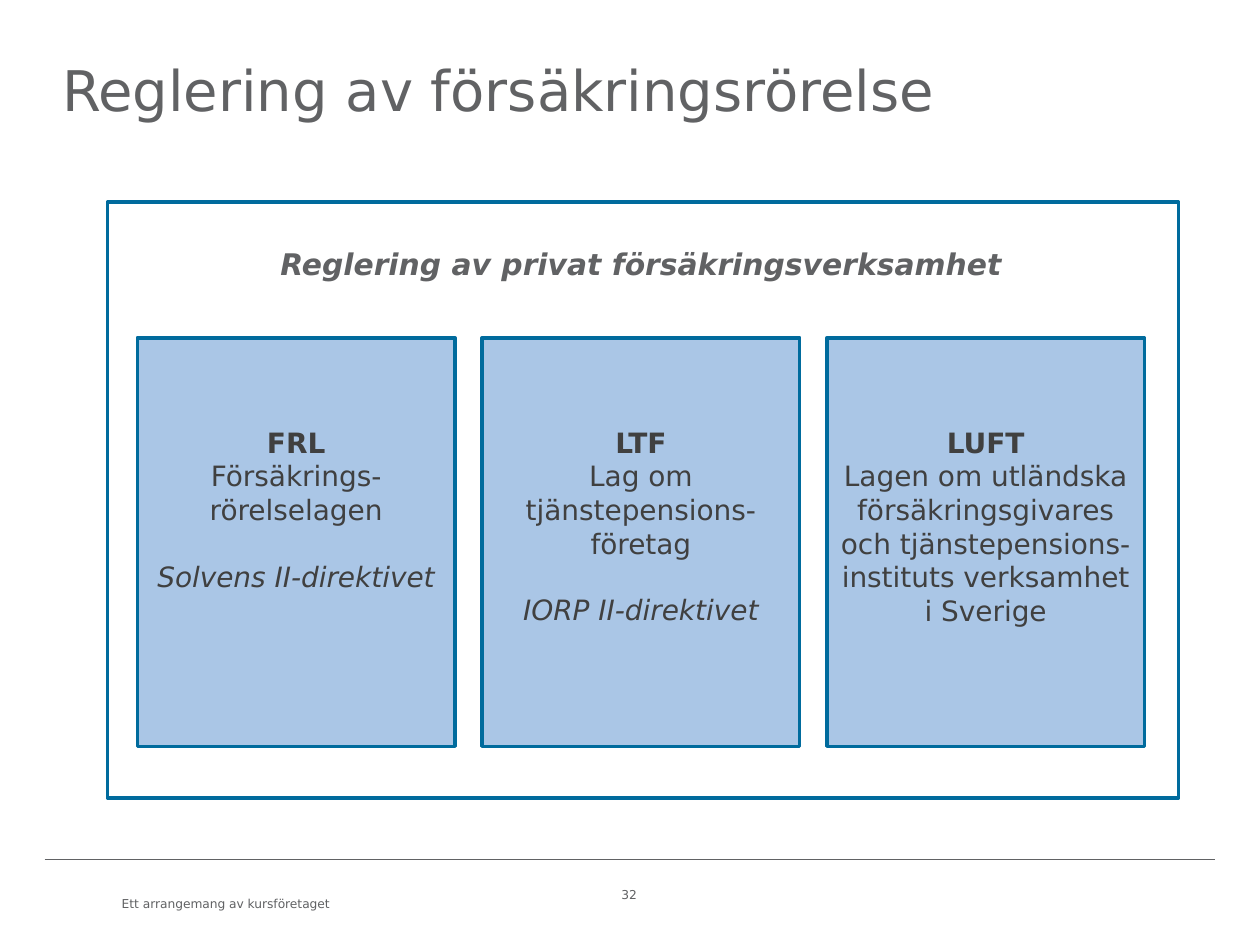
from pptx import Presentation
from pptx.dml.color import RGBColor
from pptx.enum.shapes import MSO_CONNECTOR as Line, MSO_SHAPE as Shape
from pptx.enum.text import MSO_ANCHOR as Anchor, PP_ALIGN as Align
from pptx.util import Pt
from lxml.etree import SubElement
from pptx.oxml.ns import qn

# Content
TITLE = "Reglering av försäkringsrörelse"
HEADING = "Reglering av privat försäkringsverksamhet"
LAWS = [
    ("FRL", "Försäkrings-rörelselagen", "Solvens II-direktivet"),
    ("LTF", "Lag om tjänstepensions-företag", "IORP II-direktivet"),
    ("LUFT", "Lagen om utländska försäkringsgivares och tjänstepensions-instituts "
             "verksamhet i Sverige", None),
]
FOOTER = "Ett arrangemang av kursföretaget"
NUMBER = "32"

FONT = "DejaVu Sans"
GREY = RGBColor(0x61, 0x62, 0x64)
DARK = RGBColor(0x40, 0x40, 0x40)
BLUE = RGBColor(0x00, 0x6B, 0x9D)
PALE = RGBColor(0xAA, 0xC6, 0xE6)

# Card grid
LEFT, TOP, WIDTH, HEIGHT, STEP = 78.5, 193, 181.5, 233.5, 197

deck = Presentation()
deck.slide_width, deck.slide_height = Pt(720), Pt(540)
slide = deck.slides.add_slide(deck.slide_layouts[6])
shapes = slide.shapes


def write(par, text, size=16, color=GREY, bold=False, italic=False,
          align=Align.LEFT, space=None, before=0):
    par.alignment = align
    par.space_before = Pt(before)
    if space:
        par.line_spacing = space
    run = par.add_run()
    run.text = text
    font = run.font
    font.name, font.size, font.bold, font.italic = FONT, Pt(size), bold, italic
    font.color.rgb = color


def label(text, x, y, w, h, **style):
    frame = shapes.add_textbox(Pt(x), Pt(y), Pt(w), Pt(h)).text_frame
    frame.word_wrap = True
    write(frame.paragraphs[0], text, **style)
    return frame


def block(x, y, w, h, fill=None):
    box = shapes.add_shape(Shape.RECTANGLE, Pt(x), Pt(y), Pt(w), Pt(h))
    box.shadow.inherit = False
    box.line.color.rgb, box.line.width = BLUE, Pt(2)
    if fill:
        box.fill.solid()
        box.fill.fore_color.rgb = fill
    else:
        box.fill.background()
    return box


# Footer
rule = shapes.add_connector(Line.STRAIGHT, Pt(25.5), Pt(491), Pt(694.5), Pt(491))
rule.line.color.rgb, rule.line.width = GREY, Pt(0.75)
SubElement(rule.element.spPr, qn("a:effectLst"))
label(FOOTER, 62.5, 510, 152.5, 14.5, size=7, space=0.85)
label(NUMBER, 309.5, 503.5, 100, 20, size=7, align=Align.CENTER)

# Title
head = label(TITLE, 35.5, 29, 648, 65, size=32)
head.margin_left = head.margin_right = head.margin_bottom = 0
head.margin_top = Pt(2.5)

# Panel with heading
block(61.5, 115.5, 612, 340.5)
label(HEADING, 78.5, 137.5, 576, 42.5, size=17, bold=True, italic=True,
      align=Align.CENTER, space=Pt(20))

# Law cards
for col, (name, law, rule_set) in enumerate(LAWS):
    frame = block(LEFT + col * STEP, TOP, WIDTH, HEIGHT, PALE).text_frame
    frame.word_wrap = True
    frame.vertical_anchor = Anchor.TOP
    frame.margin_top = Pt(50)
    style = dict(color=DARK, align=Align.CENTER)
    write(frame.paragraphs[0], name, bold=True, **style)
    write(frame.add_paragraph(), law, **style)
    if rule_set:
        write(frame.add_paragraph(), rule_set, italic=True, before=19, **style)

deck.save("out.pptx")
